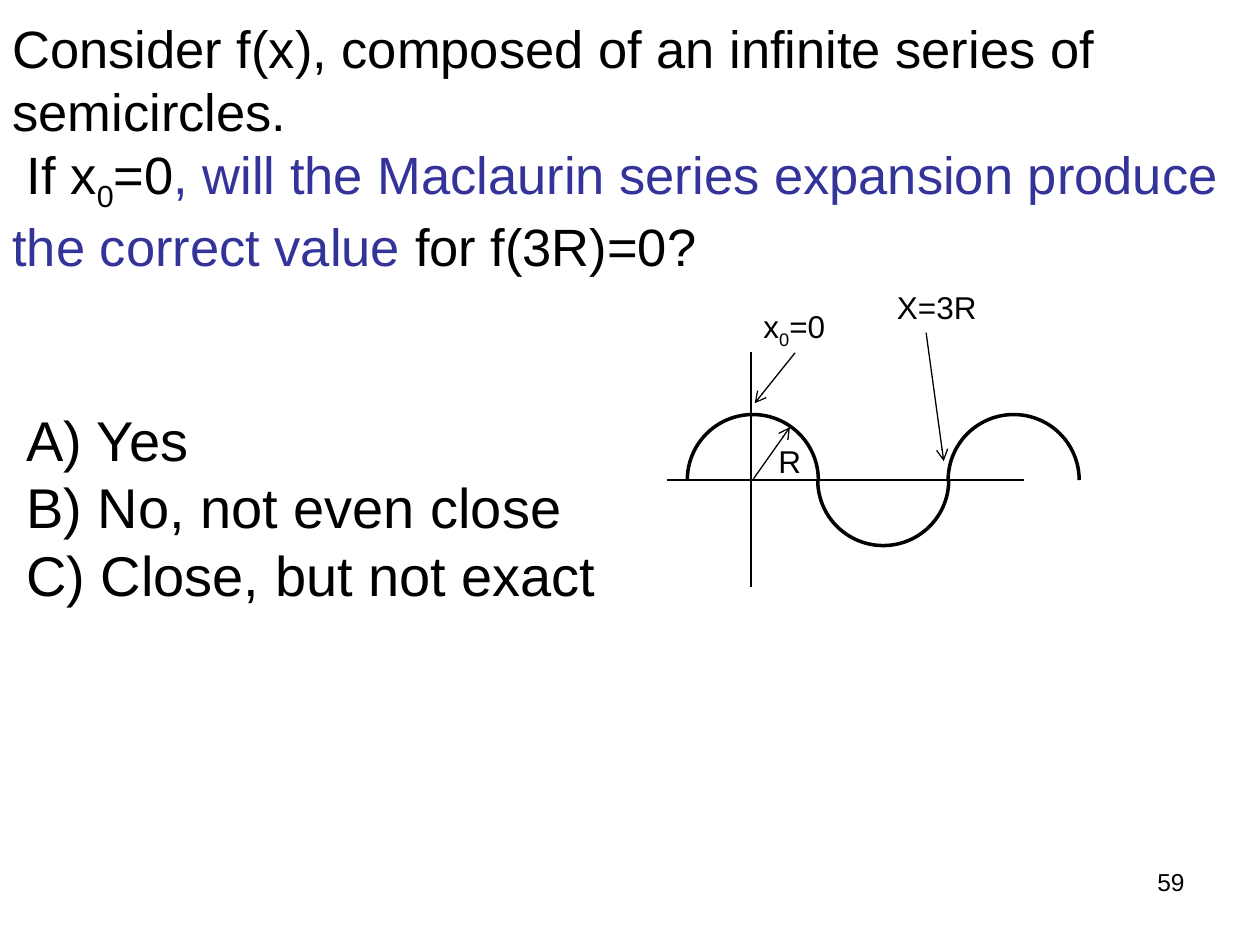
from lxml.etree import SubElement
from pptx import Presentation
from pptx.dml.color import RGBColor
from pptx.enum.shapes import MSO_CONNECTOR, MSO_SHAPE
from pptx.enum.text import MSO_AUTO_SIZE, PP_ALIGN
from pptx.oxml.ns import qn
from pptx.util import Inches, Pt

COLORS = {"ink": "000000", "accent": "333399"}

deck = Presentation()
deck.slide_width, deck.slide_height = Inches(10), Inches(7.5)
page = deck.slides.add_slide(deck.slide_layouts[6])

# Grid: 100 columns by 75 rows
column = deck.slide_width / 100
row = deck.slide_height / 75


def add_text(left, top, width, height, size, paragraphs, wrap=True, align=PP_ALIGN.LEFT):
    """Each paragraph is a list of (text, color, baseline percent) runs."""
    box = page.shapes.add_textbox(
        int(left * column), int(top * row), int(width * column), int(height * row))
    frame = box.text_frame
    frame.word_wrap = wrap
    frame.auto_size = MSO_AUTO_SIZE.SHAPE_TO_FIT_TEXT
    for index, runs in enumerate(paragraphs):
        para = frame.add_paragraph() if index else frame.paragraphs[0]
        para.alignment = align
        for text, color, baseline in runs:
            span = para.add_run()
            span.text = text
            span.font.name = "Arial"
            span.font.size = Pt(size)
            span.font.color.rgb = RGBColor.from_string(COLORS[color])
            if baseline:
                span.font._element.set("baseline", str(baseline * 1000))


def add_line(start, end, arrow=False):
    line = page.shapes.add_connector(
        MSO_CONNECTOR.STRAIGHT, int(start[0] * column), int(start[1] * row),
        int(end[0] * column), int(end[1] * row))
    line.line.color.rgb = RGBColor.from_string(COLORS["ink"])
    line.line.width = Pt(0.75)
    if arrow:
        SubElement(line.line._get_or_add_ln(), qn("a:tailEnd"), type="arrow")
    SubElement(line._element.spPr, qn("a:effectLst"))


# Question
add_text(0, 0.8, 100, 21.2, 30, [
    [("Consider f(x), composed of an infinite series of semicircles.", "ink", 0)],
    [(" If x", "ink", 0), ("0", "ink", -25), ("=0", "ink", 0),
     (", will the Maclaurin series expansion produce the correct value ", "accent", 0),
     ("for f(3R)=0?", "ink", 0)],
])

# Answers
answers = ["A) Yes", "B) No, not even close", "C) Close, but not exact"]
add_text(1.1, 31.7, 50.2, 17.2, 32, [[(answer, "ink", 0)] for answer in answers])

# Axes
add_line((59.6, 27.9), (59.6, 46.6))
add_line((52.9, 38.1), (81.3, 38.1))

# Semicircles, alternately above and below the axis
diameter = 10.4
for index in range(3):
    arc = page.shapes.add_shape(
        MSO_SHAPE.ARC, int((54.55 + index * 10.35) * column), int(32.9 * row),
        int(diameter * column), int(diameter * row))
    start, end = (0, 180) if index % 2 else (180, 0)
    arc.adjustments[0] = start * 0.6  # 60000ths of a degree per 100000
    arc.adjustments[1] = end * 0.6
    arc.shadow.inherit = False
    arc.fill.background()
    arc.line.color.rgb = RGBColor.from_string(COLORS["ink"])
    arc.line.width = Pt(2)

# Pointers: x0, 3R and the radius
for start, end in [((63.1, 28), (59.9, 32)),
                   ((73.5, 26.4), (74.9, 36.6)),
                   ((59.8, 38), (62.7, 33.9))]:
    add_line(start, end, arrow=True)

# Diagram labels
for left, top, width, runs in [
    (59.6, 23.9, 7.1, [("x", "ink", 0), ("0", "ink", -25), ("=0", "ink", 0)]),
    (70.2, 22.4, 8.5, [("X=3R", "ink", 0)]),
    (60.8, 34.6, 3.8, [("R", "ink", 0)]),
]:
    add_text(left, top, width, 4, 18, [runs], wrap=False)

# Page number
add_text(71.7, 68.3, 23.3, 5.2, 14, [[("59", "ink", 0)]], align=PP_ALIGN.RIGHT)

deck.save("out.pptx")
